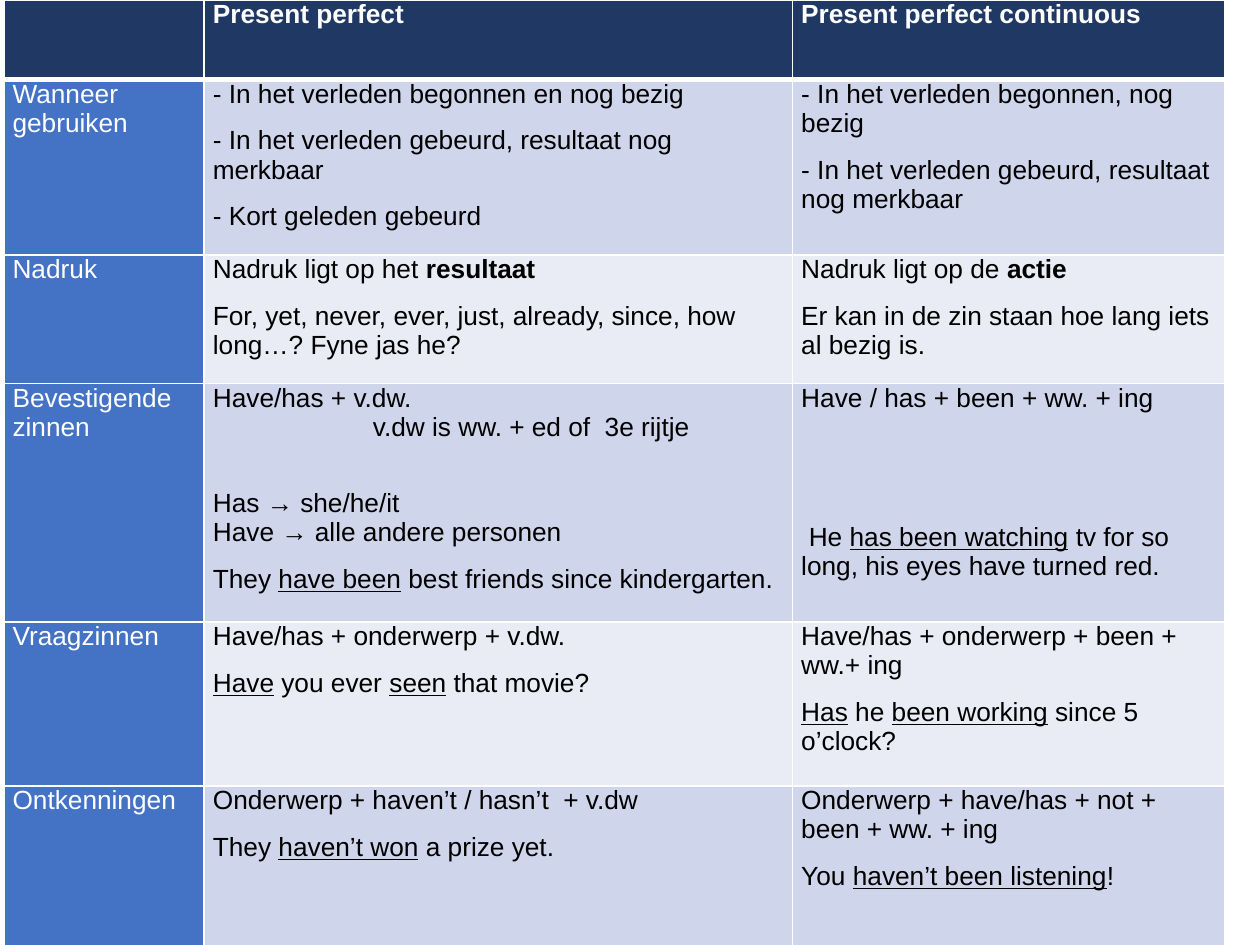
import lxml.etree
import pptx
import pptx.dml.color
import pptx.enum.text
import pptx.oxml.ns
import pptx.util

COLORS = {
    "header": "203864",
    "label": "4472C4",
    "band_dark": "CFD5EA",
    "band_light": "E9EBF5",
    "white": "FFFFFF",
    "black": "000000",
}
COLUMN_SHARES = [1.59, 4.67, 3.43]
ROW_SHARES = [0.63, 1.39, 1.02, 1.89, 1.3, 1.86]

GRAMMAR = [
    ["", ["*Present perfect*"], ["*Present perfect continuous*"]],
    [
        "Wanneer gebruiken",
        [
            "- In het verleden begonnen en nog bezig",
            "- In het verleden gebeurd, resultaat nog merkbaar",
            "- Kort geleden gebeurd",
        ],
        [
            "- In het verleden begonnen, nog bezig",
            "- In het verleden gebeurd, resultaat nog merkbaar",
        ],
    ],
    [
        "Nadruk",
        [
            "Nadruk ligt op het *resultaat*",
            "For, yet, never, ever, just, already, since, how long…? Fyne jas he?",
        ],
        [
            "Nadruk ligt op de *actie*",
            "Er kan in de zin staan hoe lang iets al bezig is.",
        ],
    ],
    [
        "Bevestigende zinnen",
        [
            ("Have/has + v.dw.", {"after": 0}),
            ("v.dw is ww. + ed of  3e rijtje", {"after": 27, "left": 1.27}),
            ("Has → she/he/it", {"after": 0}),
            "Have → alle andere personen",
            "They _have been_ best friends since kindergarten.",
        ],
        [
            ("Have / has + been + ww. + ing", {"after": 63}),
            (
                "He _has been watching_ tv for so long, his eyes have turned red.",
                {"first": 0.06},
            ),
        ],
    ],
    [
        "Vraagzinnen",
        ["Have/has + onderwerp + v.dw.", "_Have_ you ever _seen_ that movie?"],
        [
            "Have/has + onderwerp + been + ww.+ ing",
            "_Has_ he _been working_ since 5 o’clock?",
        ],
    ],
    [
        "Ontkenningen",
        ["Onderwerp + haven’t / hasn’t  + v.dw", "They _haven’t won_ a prize yet."],
        [
            "Onderwerp + have/has + not + been + ww. + ing",
            "You _haven’t been listening_!",
        ],
    ],
]


def rgb(name):
    """Return the named colour as an RGB value."""
    return pptx.dml.color.RGBColor.from_string(COLORS[name])


def write(paragraph, text, color="black", size=15, after=10, left=0, first=0):
    """Write text in which *stars* mark bold and _underscores_ mark underline."""
    paragraph.alignment = pptx.enum.text.PP_ALIGN.LEFT
    paragraph.space_after = pptx.util.Pt(after)
    properties = paragraph._p.get_or_add_pPr()
    properties.set("marL", str(pptx.util.Inches(left)))
    properties.set("indent", str(pptx.util.Inches(first)))
    for bold_index, bold_part in enumerate(text.split("*")):
        for line_index, words in enumerate(bold_part.split("_")):
            if words:
                run = paragraph.add_run()
                run.text = words
                run.font.name = "Arial"
                run.font.size = pptx.util.Pt(size)
                run.font.color.rgb = rgb(color)
                run.font.bold = bold_index % 2 == 1
                run.font.underline = line_index % 2 == 1


def draw_borders(cell, top, bottom):
    """Give a cell white borders, with the top and bottom widths in points."""
    properties = cell._tc.get_or_add_tcPr()
    qn = pptx.oxml.ns.qn
    for side, width in (("L", 1), ("R", 1), ("T", top), ("B", bottom)):
        line = lxml.etree.SubElement(
            properties, qn(f"a:ln{side}"), w=str(pptx.util.Pt(width))
        )
        fill = lxml.etree.SubElement(line, qn("a:solidFill"))
        lxml.etree.SubElement(fill, qn("a:srgbClr"), val=COLORS["white"])


def fill_cell(cell, content, background, color, top, bottom):
    """Format one cell and write its paragraphs."""
    cell.margin_left = cell.margin_right = pptx.util.Inches(0.07)
    cell.margin_top = cell.margin_bottom = 0
    draw_borders(cell, top, bottom)
    cell.fill.solid()
    cell.fill.fore_color.rgb = rgb(background)
    frame = cell.text_frame
    for index, item in enumerate(content):
        text, layout = item if isinstance(item, tuple) else (item, {})
        paragraph = frame.add_paragraph() if index else frame.paragraphs[0]
        write(paragraph, text, color=color, **layout)


def add_grammar_table(slide, left, top, width, height):
    """Place the comparison of the two tenses in the given box."""
    table = slide.shapes.add_table(
        len(ROW_SHARES), len(COLUMN_SHARES), left, top, width, height
    ).table
    for column, share in zip(table.columns, COLUMN_SHARES):
        column.width = int(width * share / sum(COLUMN_SHARES))
    for row, share in zip(table.rows, ROW_SHARES):
        row.height = int(height * share / sum(ROW_SHARES))
    for r, (label, perfect, continuous) in enumerate(GRAMMAR):
        for c, content in enumerate(([label], perfect, continuous)):
            if r == 0:
                background = "header"
            elif c == 0:
                background = "label"
            else:
                background = "band_dark" if r % 2 else "band_light"
            fill_cell(
                table.cell(r, c),
                content,
                background,
                color="white" if r == 0 or c == 0 else "black",
                top=3 if r == 1 else 1,
                bottom=3 if r == 0 else 1,
            )


def main():
    """Build the slide and save it."""
    deck = pptx.Presentation()
    deck.slide_width = pptx.util.Inches(10)
    deck.slide_height = pptx.util.Inches(7.5)
    slide = deck.slides.add_slide(deck.slide_layouts[6])
    across, down = deck.slide_width, deck.slide_height
    add_grammar_table(
        slide, int(across * 0.003), 0, int(across * 0.969), int(down * 1.08)
    )
    deck.save("out.pptx")


if __name__ == "__main__":
    main()
